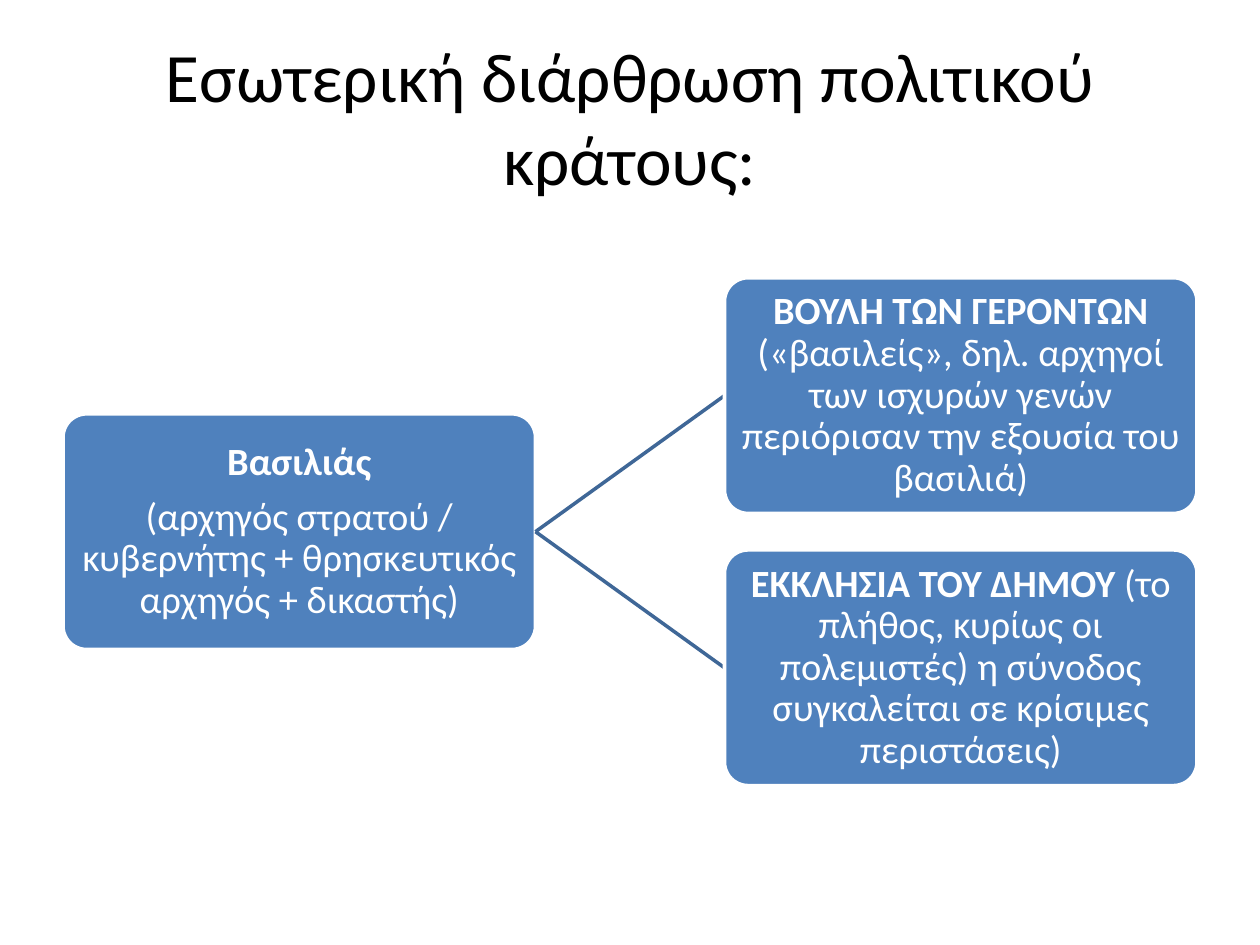
from dataclasses import dataclass

from lxml import etree
from pptx import Presentation
from pptx import util as u
from pptx.dml.color import RGBColor
from pptx.enum import shapes, text
from pptx.oxml.ns import qn


@dataclass(frozen=True)
class Theme:
    font: str = "Calibri"
    black: RGBColor = RGBColor(0x00, 0x00, 0x00)
    white: RGBColor = RGBColor(0xFF, 0xFF, 0xFF)
    box: RGBColor = RGBColor(0x4F, 0x81, 0xBD)
    link: RGBColor = RGBColor(0x3F, 0x67, 0x97)
    title_size: float = 39.6
    body_size: float = 22
    line_width: float = 2


theme = Theme()


def write_text(shape, paragraphs, size, color, inset_x, inset_y, line_spacing=1.0, space_after=0):
    """Fill a shape with paragraphs, each a list of (words, bold) runs."""
    frame = shape.text_frame
    frame.word_wrap = True
    frame.vertical_anchor = text.MSO_ANCHOR.MIDDLE
    frame.margin_left = frame.margin_right = u.Inches(inset_x)
    frame.margin_top = frame.margin_bottom = u.Inches(inset_y)
    for index, runs in enumerate(paragraphs):
        paragraph = frame.add_paragraph() if index else frame.paragraphs[0]
        paragraph.alignment = text.PP_ALIGN.CENTER
        paragraph.line_spacing = line_spacing
        paragraph.space_after = u.Pt(space_after)
        for words, bold in runs:
            run = paragraph.add_run()
            run.text = words
            run.font.name = theme.font
            run.font.size = u.Pt(size)
            run.font.bold = bold
            run.font.color.rgb = color


def add_box(left, top, paragraphs):
    box = slide.shapes.add_shape(
        shapes.MSO_SHAPE.ROUNDED_RECTANGLE,
        u.Inches(left), u.Inches(top), u.Inches(box_width), u.Inches(box_height))
    box.adjustments[0] = 0.1
    box.shadow.inherit = False
    box.fill.solid()
    box.fill.fore_color.rgb = theme.box
    box.line.color.rgb = theme.white
    box.line.width = u.Pt(theme.line_width)
    write_text(box, paragraphs, theme.body_size, theme.white, 0.07, 0.07,
               line_spacing=0.9, space_after=0.35 * theme.body_size)
    return box


presentation = Presentation()
presentation.slide_width = u.Inches(10)
presentation.slide_height = u.Inches(7.5)
slide = presentation.slides.add_slide(presentation.slide_layouts[6])

# Title
title = slide.shapes.add_textbox(u.Inches(0.5), u.Inches(0.3), u.Inches(9), u.Inches(1.25))
write_text(title, [[("Εσωτερική διάρθρωση πολιτικού κράτους:", False)]],
           theme.title_size, theme.black, 0.1, 0.05)

# Hierarchy grid: the king on the left, two bodies stacked on the right
box_width, box_height = 3.75, 1.87
left_column, right_column = 0.5, 5.75
center_y, row_step = 4.22, 2.16
king_top = center_y - box_height / 2

king = add_box(left_column, king_top, [
    [("Βασιλιάς", True)],
    [("(αρχηγός στρατού / κυβερνήτης + θρησκευτικός αρχηγός + δικαστής)", False)],
])

bodies = [
    ("ΒΟΥΛΗ ΤΩΝ ΓΕΡΟΝΤΩΝ ",
     "(«βασιλείς», δηλ. αρχηγοί των ισχυρών γενών περιόρισαν την εξουσία του βασιλιά)"),
    ("ΕΚΚΛΗΣΙΑ ΤΟΥ ΔΗΜΟΥ ",
     "(το πλήθος, κυρίως οι πολεμιστές) η σύνοδος συγκαλείται σε κρίσιμες περιστάσεις)"),
]

# Each link lies behind the box it leads to
for row, (name, description) in enumerate(bodies):
    offset = (row - 0.5) * row_step
    link = slide.shapes.add_connector(
        shapes.MSO_CONNECTOR.STRAIGHT,
        u.Inches(left_column + box_width), u.Inches(center_y),
        u.Inches(right_column), u.Inches(center_y + offset))
    link.line.color.rgb = theme.link
    link.line.width = u.Pt(theme.line_width)
    etree.SubElement(link.element.spPr, qn("a:effectLst"))
    body = add_box(right_column, king_top + offset, [[(name, True), (description, False)]])
    link.begin_connect(king, 3)
    link.end_connect(body, 1)

presentation.save("out.pptx")
